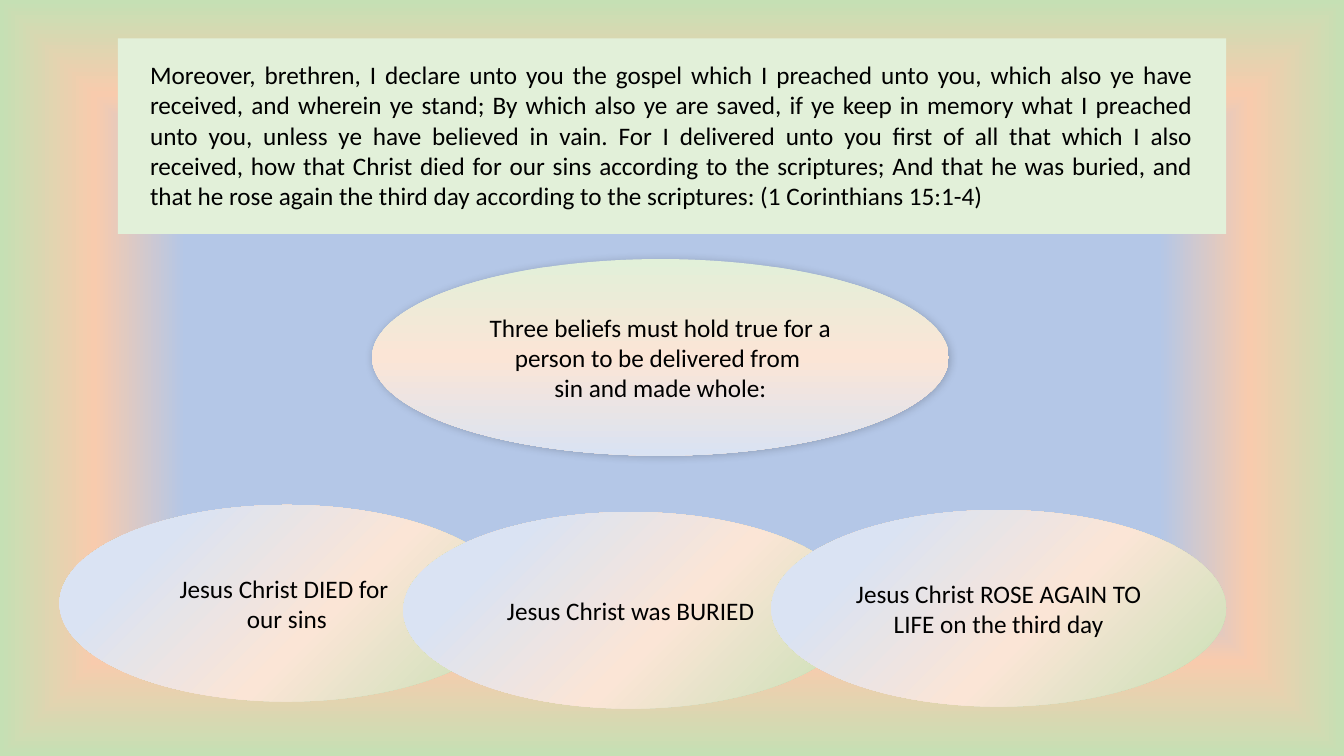
from pptx import Presentation
from pptx.dml.color import RGBColor
from pptx.enum.shapes import MSO_SHAPE
from pptx.enum.text import MSO_ANCHOR, MSO_AUTO_SIZE, PP_ALIGN
from pptx.oxml import parse_xml
from pptx.oxml.ns import nsdecls, qn
from pptx.util import Inches, Pt

BLACK = RGBColor(0x00, 0x00, 0x00)
PALE_GREEN = RGBColor(0xE2, 0xF0, 0xD9)
GREEN = RGBColor(0xC5, 0xE0, 0xB4)
PALE_PEACH = RGBColor(0xFB, 0xE5, 0xD6)
PEACH = RGBColor(0xF8, 0xCB, 0xAD)
PALE_BLUE = RGBColor(0xDA, 0xE3, 0xF3)
BLUE = RGBColor(0xB4, 0xC7, 0xE7)

FROM_CENTRE = '<a:path path="rect"><a:fillToRect l="50000" t="50000" r="50000" b="50000"/></a:path>'
FROM_TOP_LEFT = '<a:path path="circle"><a:fillToRect r="100000" b="100000"/></a:path>'
DOWNWARD = '<a:lin ang="5400000" scaled="0"/>'


def apply_gradient(fill, element, stops, direction):
    fill.gradient()
    placeholder = element.find(".//" + qn("a:gradFill"))
    stop_xml = "".join(
        f'<a:gs pos="{percent * 1000}"><a:srgbClr val="{color}"/></a:gs>'
        for percent, color in stops
    )
    gradient = parse_xml(
        f'<a:gradFill {nsdecls("a")} rotWithShape="1">'
        f"<a:gsLst>{stop_xml}</a:gsLst>{direction}</a:gradFill>"
    )
    placeholder.getparent().replace(placeholder, gradient)


def write_lines(frame, lines, alignment):
    frame.word_wrap = True
    for index, line in enumerate(lines):
        paragraph = frame.paragraphs[0] if index == 0 else frame.add_paragraph()
        paragraph.alignment = alignment
        run = paragraph.add_run()
        run.text = line
        run.font.name = "Calibri"
        run.font.size = Pt(18)
        run.font.color.rgb = BLACK


prs = Presentation()
prs.slide_width = Inches(13.33)
prs.slide_height = Inches(7.5)
slide = prs.slides.add_slide(prs.slide_layouts[6])
apply_gradient(
    slide.background.fill, slide.element,
    [(51, BLUE), (75, PEACH), (100, GREEN)], FROM_CENTRE,
)

scripture_panel = slide.shapes.add_shape(
    MSO_SHAPE.RECTANGLE, Inches(1.17), Inches(0.38), Inches(10.99), Inches(1.94)
)
scripture_panel.fill.solid()
scripture_panel.fill.fore_color.rgb = PALE_GREEN
scripture_panel.line.fill.background()
scripture_panel.shadow.inherit = False

INTRO_STOPS = [(0, PALE_GREEN), (50, PALE_PEACH), (100, PALE_BLUE)]
BELIEF_STOPS = [(21, PALE_BLUE), (58, PALE_PEACH), (100, GREEN)]
statements = [
    (3.69, 2.57, 5.72, INTRO_STOPS, DOWNWARD,
     ["Three beliefs must hold true for a person to be delivered from ", "sin and made whole:"]),
    (0.59, 5.01, 4.51, BELIEF_STOPS, FROM_TOP_LEFT, ["Jesus Christ DIED for ", "our sins"]),
    (4, 5.08, 4.51, BELIEF_STOPS, FROM_TOP_LEFT, ["Jesus Christ was BURIED"]),
    (7.65, 5.06, 4.51, BELIEF_STOPS, FROM_TOP_LEFT,
     ["Jesus Christ ROSE AGAIN TO LIFE on the third day"]),
]
ovals = []
for left, top, width, stops, direction, lines in statements:
    oval = slide.shapes.add_shape(
        MSO_SHAPE.OVAL, Inches(left), Inches(top), Inches(width), Inches(1.95)
    )
    apply_gradient(oval.fill, oval.element, stops, direction)
    oval.line.fill.background()
    oval.shadow.inherit = False
    oval.text_frame.vertical_anchor = MSO_ANCHOR.MIDDLE
    write_lines(oval.text_frame, lines, PP_ALIGN.CENTER)
    ovals.append(oval)

intro_effects = ovals[0].element.spPr.find(qn("a:effectLst"))
intro_effects.append(parse_xml(
    f'<a:outerShdw {nsdecls("a")} blurRad="{Pt(6)}" dist="{Pt(1)}" dir="2700000" rotWithShape="0">'
    f'<a:srgbClr val="{BLACK}"><a:alpha val="20000"/></a:srgbClr></a:outerShdw>'
))

scripture = slide.shapes.add_textbox(Inches(1.39), Inches(0.54), Inches(10.54), Inches(1.62))
scripture.text_frame.auto_size = MSO_AUTO_SIZE.SHAPE_TO_FIT_TEXT
write_lines(
    scripture.text_frame,
    ["Moreover, brethren, I declare unto you the gospel which I preached unto you, "
     "which also ye have received, and wherein ye stand; By which also ye are saved, "
     "if ye keep in memory what I preached unto you, unless ye have believed in vain. "
     "For I delivered unto you first of all that which I also received, how that Christ "
     "died for our sins according to the scriptures; And that he was buried, and that he "
     "rose again the third day according to the scriptures: (1 Corinthians 15:1-4)"],
    PP_ALIGN.JUSTIFY,
)

prs.save("out.pptx")
